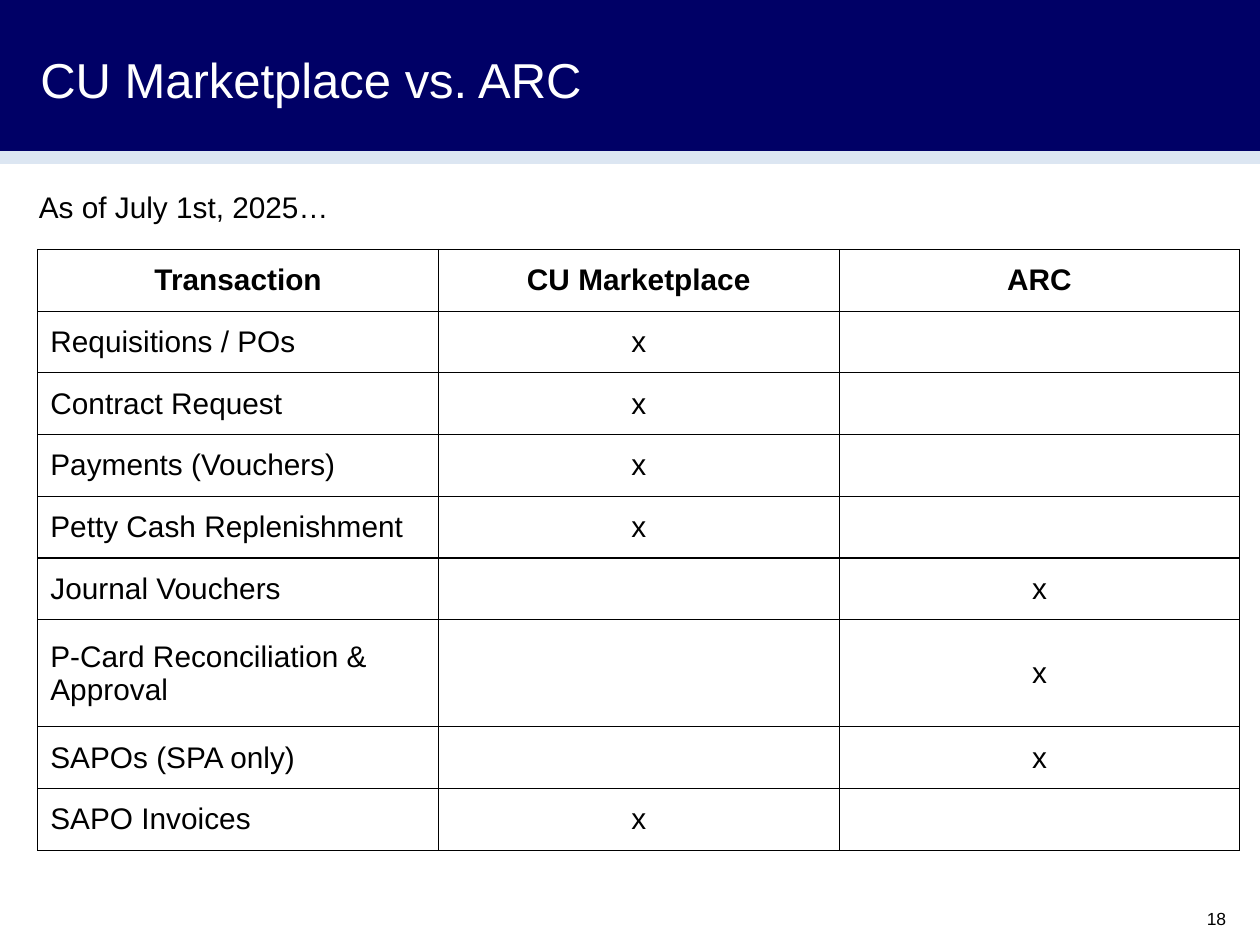
from lxml import etree
from pptx import Presentation
from pptx.dml.color import RGBColor
from pptx.enum.shapes import MSO_CONNECTOR, MSO_SHAPE
from pptx.enum.text import MSO_ANCHOR, PP_ALIGN
from pptx.oxml import parse_xml
from pptx.oxml.ns import nsdecls, qn
from pptx.util import Inches, Pt

NAVY, PALE_BLUE, WHITE, BLACK = "000066", "DCE6F2", "FFFFFF", "000000"
HEADER = ("Transaction", "CU Marketplace", "ARC")
MARKETPLACE, ARC = ("x", ""), ("", "x")
ROWS = [
    HEADER,
    ("Requisitions / POs", *MARKETPLACE),
    ("Contract Request", *MARKETPLACE),
    ("Payments (Vouchers)", *MARKETPLACE),
    ("Petty Cash Replenishment", *MARKETPLACE),
    ("Journal Vouchers", *ARC),
    ("P-Card Reconciliation & Approval", *ARC),
    ("SAPOs (SPA only)", *ARC),
    ("SAPO Invoices", *MARKETPLACE),
]
ROW_HEIGHT, TALL_ROW_HEIGHT, TALL_ROW = 0.49, 0.85, 6
COLUMN_WIDTH = 3.18


def rgb(value):
    return RGBColor.from_string(value)


def write(text_frame, text, size, color, align=PP_ALIGN.LEFT, bold=False):
    text_frame.text = text
    text_frame.word_wrap = True
    paragraph = text_frame.paragraphs[0]
    paragraph.alignment = align
    font = paragraph.runs[0].font
    font.name, font.size, font.bold = "Arial", Pt(size), bold
    font.color.rgb = rgb(color)


presentation = Presentation()
presentation.slide_width, presentation.slide_height = Inches(10), Inches(7.5)
slide = presentation.slides.add_slide(presentation.slide_layouts[5])
shapes = slide.shapes

# Header band and its underline, placed behind the title
band = shapes.add_shape(MSO_SHAPE.RECTANGLE, 0, 0, Inches(10), Inches(1.25))
band.shadow.inherit = False
band.fill.solid()
band.fill.fore_color.rgb = rgb(NAVY)
band.line.fill.background()
underline = shapes.add_connector(
    MSO_CONNECTOR.STRAIGHT, 0, Inches(1.25), Inches(10), Inches(1.25))
underline.line.color.rgb = rgb(PALE_BLUE)
underline.line.width = Pt(8)
etree.SubElement(underline._element.spPr, qn("a:effectLst"))

title = shapes.title
title.left, title.top = Inches(0.22), Inches(0.29)
title.width, title.height = Inches(9.3), Inches(0.99)
shapes._spTree.append(title._element)
write(title.text_frame, "CU Marketplace vs. ARC", 28, WHITE)

date_note = shapes.add_textbox(Inches(0.21), Inches(1.4), Inches(9.39), Inches(0.49))
write(date_note.text_frame, "As of July 1st, 2025…", 17, BLACK)

for shape in (title, date_note):
    frame = shape.text_frame
    frame.vertical_anchor = MSO_ANCHOR.TOP
    frame.margin_left = frame.margin_right = Inches(0.1)
    frame.margin_top = frame.margin_bottom = Inches(0.1)

page_number = shapes.add_textbox(Inches(7.5), Inches(7.02), Inches(2.33), Inches(0.4))
page_number.text_frame.vertical_anchor = MSO_ANCHOR.BOTTOM
write(page_number.text_frame, "18", 10, BLACK, PP_ALIGN.RIGHT)

# Transaction table
heights = [TALL_ROW_HEIGHT if i == TALL_ROW else ROW_HEIGHT for i in range(len(ROWS))]
table = shapes.add_table(
    len(ROWS), len(HEADER), Inches(0.3), Inches(1.98),
    Inches(COLUMN_WIDTH * len(HEADER)), Inches(sum(heights))).table
table.horz_banding = False
for column in table.columns:
    column.width = Inches(COLUMN_WIDTH)

for i, texts in enumerate(ROWS):
    table.rows[i].height = Inches(heights[i])
    for j, text in enumerate(texts):
        cell = table.cell(i, j)
        properties = cell._tc.get_or_add_tcPr()
        for side in ("lnL", "lnR", "lnT", "lnB"):
            properties.append(parse_xml(
                f'<a:{side} {nsdecls("a")} w="{Pt(0.75)}"><a:solidFill>'
                f'<a:srgbClr val="{BLACK}"/></a:solidFill></a:{side}>'))
        cell.fill.background()
        if not text:
            continue
        cell.vertical_anchor = MSO_ANCHOR.MIDDLE
        cell.margin_left = cell.margin_right = Inches(0.1)
        cell.margin_top = cell.margin_bottom = Inches(0.1)
        align = PP_ALIGN.LEFT if i and j == 0 else PP_ALIGN.CENTER
        write(cell.text_frame, text, 17, BLACK, align, bold=i == 0)

presentation.save("out.pptx")
